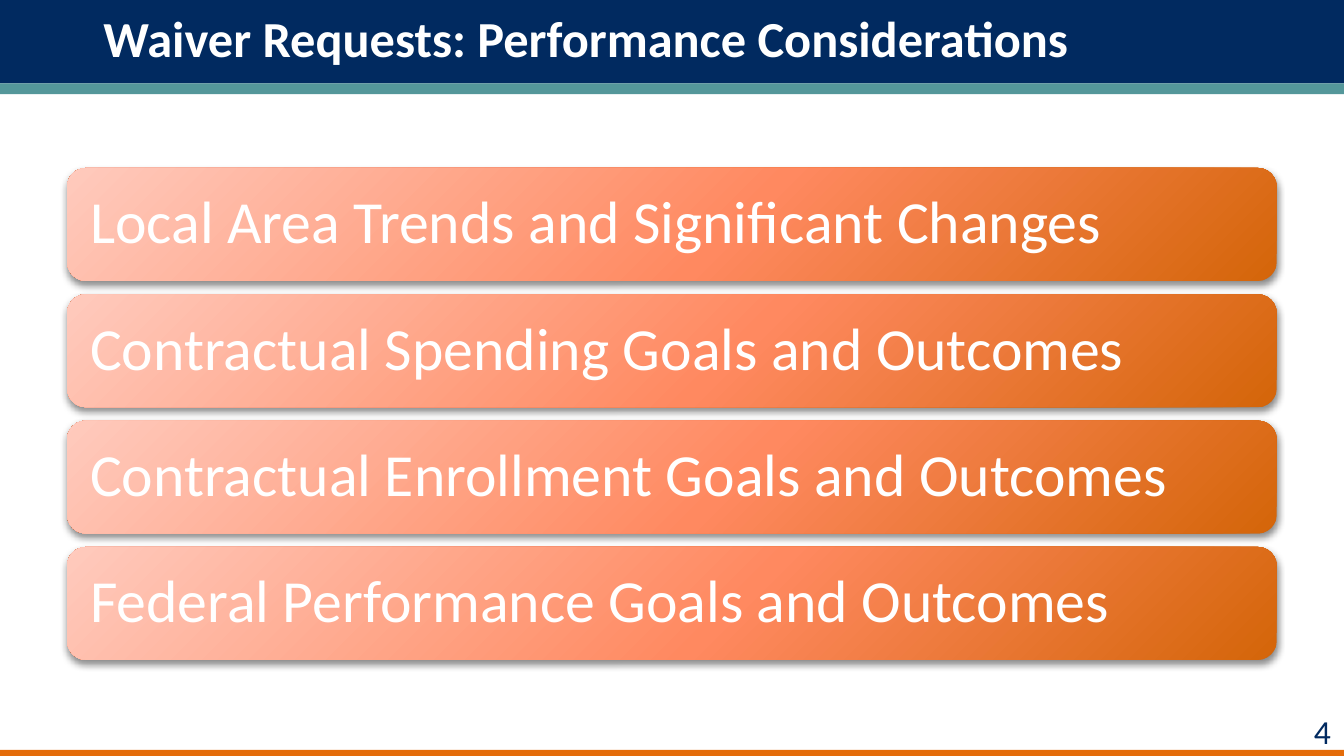
"""Build the slide on performance considerations for waiver requests."""
from dataclasses import dataclass

from pptx import Presentation
from pptx.dml.color import RGBColor
from pptx.enum.shapes import MSO_SHAPE
from pptx.enum.text import MSO_ANCHOR, PP_ALIGN
from pptx.oxml import parse_xml
from pptx.oxml.ns import nsdecls
from pptx.shapes.autoshape import Shape
from pptx.slide import Slide
from pptx.util import Inches, Pt

NAVY = RGBColor(0x01, 0x2A, 0x60)
TEAL = RGBColor(0x54, 0x97, 0x9A)
ORANGE = RGBColor(0xE4, 0x6C, 0x0A)
WHITE = RGBColor(0xFF, 0xFF, 0xFF)
PEACH = RGBColor(0xFF, 0xCA, 0xBD)
CORAL = RGBColor(0xFF, 0x89, 0x60)
RUST = RGBColor(0xD4, 0x65, 0x09)
BLACK = RGBColor(0, 0, 0)

WIDTH = Inches(10)
HEIGHT = WIDTH * 9 // 16
STOPS = ((0, PEACH), (55, CORAL), (100, RUST))
MARGINS = ("margin_left", "margin_top", "margin_right", "margin_bottom")


@dataclass
class Bar:
    top: float
    height: float
    color: RGBColor


@dataclass
class Card:
    top: float
    text: str


BARS = [Bar(0, 0.62, NAVY), Bar(0.62, 0.08, TEAL), Bar(5.58, 0.05, ORANGE)]
TOPICS = (
    "Local Area Trends and Significant Changes",
    "Contractual Spending Goals and Outcomes",
    "Contractual Enrollment Goals and Outcomes",
    "Federal Performance Goals and Outcomes",
)
CARDS = [Card(1.25 + 0.94 * row, text) for row, text in enumerate(TOPICS)]


def apply(target: object, values: dict) -> None:
    for name, value in values.items():
        setattr(target, name, value)


def write(shape: Shape, text: str, size: int, color: RGBColor, frame: dict,
          para: dict, bold: bool = False) -> None:
    box = shape.text_frame
    box.text = text
    line = box.paragraphs[0]
    apply(box, {"word_wrap": True, **frame})
    apply(line, para)
    apply(line.font, {"name": "Calibri", "size": Pt(size), "bold": bold})
    line.font.color.rgb = color


def draw_bar(slide: Slide, bar: Bar) -> None:
    shape = slide.shapes.add_shape(
        MSO_SHAPE.RECTANGLE, 0, Inches(bar.top), WIDTH, Inches(bar.height))
    shape.shadow.inherit = False
    shape.fill.solid()
    shape.fill.fore_color.rgb = bar.color
    shape.line.fill.background()


def draw_card(slide: Slide, card: Card) -> None:
    shape = slide.shapes.add_shape(
        MSO_SHAPE.ROUNDED_RECTANGLE,
        Inches(0.5), Inches(card.top), Inches(9), Inches(0.84))
    stops = "".join(f'<a:gs pos="{pos * 1000}"><a:srgbClr val="{color}"/></a:gs>'
                    for pos, color in STOPS)
    props = shape.element.spPr
    props.append(parse_xml(
        f'<a:gradFill {nsdecls("a")} rotWithShape="1"><a:gsLst>{stops}</a:gsLst>'
        '<a:path path="circle"><a:fillToRect l="-40000" t="-90000" r="140000"'
        ' b="190000"/></a:path></a:gradFill>'))
    props.append(parse_xml(
        f'<a:effectLst {nsdecls("a")}><a:outerShdw blurRad="{Pt(4)}"'
        f' dist="{Pt(2)}" dir="5400000" rotWithShape="0"><a:srgbClr val="{BLACK}">'
        '<a:alpha val="45000"/></a:srgbClr></a:outerShdw></a:effectLst>'))
    shape.line.fill.background()
    frame = {"vertical_anchor": MSO_ANCHOR.MIDDLE,
             **dict.fromkeys(MARGINS, Inches(0.13))}
    write(shape, card.text, 32, WHITE, frame,
          {"alignment": PP_ALIGN.LEFT, "line_spacing": 0.9})


def main() -> None:
    deck = Presentation()
    apply(deck, {"slide_width": WIDTH, "slide_height": HEIGHT})
    slide = deck.slides.add_slide(deck.slide_layouts[5])

    for bar in BARS:
        draw_bar(slide, bar)

    page = slide.shapes.add_textbox(
        Inches(9.42), Inches(5.24), Inches(0.58), Inches(0.4))
    write(page, "4", 18, NAVY, {}, {"alignment": PP_ALIGN.RIGHT})

    title = slide.shapes.title
    apply(title, {"left": Inches(0.67), "top": 0,
                  "width": Inches(8.95), "height": Inches(0.62)})
    write(title, "Waiver Requests: Performance Considerations", 27, WHITE,
          {"vertical_anchor": MSO_ANCHOR.MIDDLE},
          {"alignment": PP_ALIGN.LEFT, "line_spacing": 0.9}, bold=True)
    title.element.getparent().append(title.element)

    for card in CARDS:
        draw_card(slide, card)

    deck.save("out.pptx")


if __name__ == "__main__":
    main()
